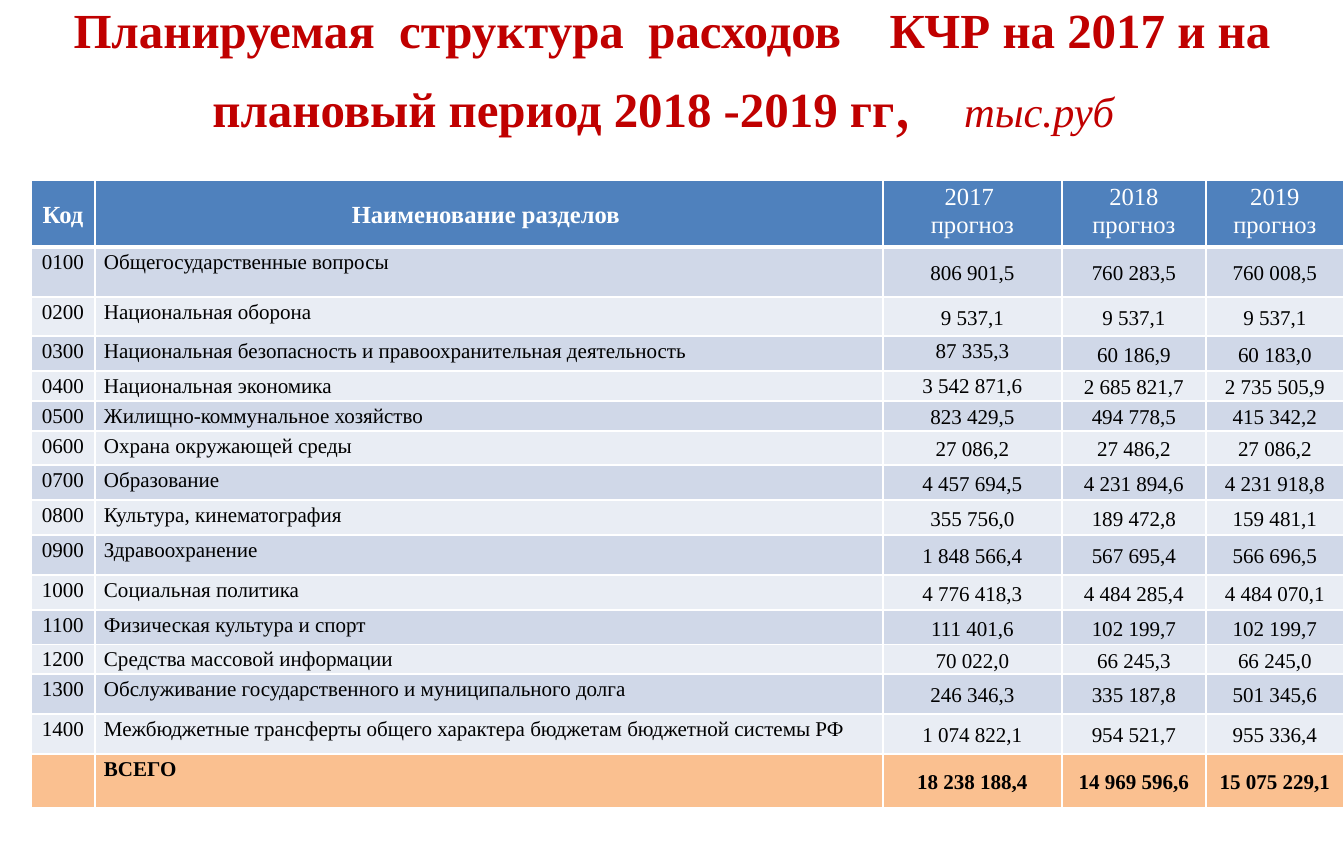
from dataclasses import dataclass
from lxml.etree import SubElement
from pptx import Presentation
from pptx.dml.color import RGBColor
from pptx.enum.text import MSO_ANCHOR as ANCHOR, PP_ALIGN as ALIGN
from pptx.oxml.ns import qn
from pptx.util import Pt

PX = 914400 / 126.4


@dataclass(frozen=True)
class Theme:
    font: str = "Times New Roman"
    red: str = "C00000"
    white: str = "FFFFFF"
    black: str = "000000"
    head: str = "4F81BD"
    bands: tuple = ("D0D8E8", "E9EDF4")
    total: str = "FAC090"
    title_size: float = 27.9
    gap_size: float = 39.6
    unit_size: float = 24.3
    head_size: int = 14
    body_size: int = 12


T = Theme()
COLS = (64, 788, 179, 144, 138)
ROWS = (66, 50, 39, 35, 30, 30, 34, 35, 35, 40, 35, 35, 29, 40, 40, 54)
HEAD = ("Код", "Наименование разделов ", "2017 \nпрогноз", "2018 прогноз", "2019 прогноз")
BODY = (
    ("0100", "Общегосударственные вопросы", "806 901,5", "760 283,5", "760 008,5"),
    ("0200", "Национальная оборона", "9 537,1", "9 537,1", "9 537,1"),
    ("0300", "Национальная безопасность и правоохранительная деятельность",
     "87 335,3", "60 186,9", "60 183,0"),
    ("0400", "Национальная экономика", "3 542 871,6", "2 685 821,7", "2 735 505,9"),
    ("0500", "Жилищно-коммунальное хозяйство", "823 429,5", "494 778,5", "415 342,2"),
    ("0600", "Охрана окружающей среды", "27 086,2", "27 486,2", "27 086,2"),
    ("0700", "Образование", "4 457 694,5", "4 231 894,6", "4 231 918,8"),
    ("0800", "Культура, кинематография", "355 756,0", "189 472,8", "159 481,1"),
    ("0900", "Здравоохранение", "1 848 566,4", "567 695,4", "566 696,5"),
    ("1000", "Социальная политика", "4 776 418,3", "4 484 285,4", "4 484 070,1"),
    ("1100", "Физическая культура и спорт", "111 401,6", "102 199,7", "102 199,7"),
    ("1200", "Средства массовой информации", "70 022,0", "66 245,3", "66 245,0"),
    ("1300", "Обслуживание государственного и муниципального долга",
     "246 346,3", "335 187,8", "501 345,6"),
    ("1400", "Межбюджетные трансферты общего характера бюджетам бюджетной системы РФ",
     "1 074 822,1", "954 521,7", "955 336,4"),
)
TOTAL = ("", "ВСЕГО", "18 238 188,4", "14 969 596,6", "15 075 229,1")
TOP_CODES = ("0300", "0400")


def px(n):
    return round(n * PX)


def rgb(color):
    return RGBColor.from_string(color)


def add_text(p, text, size=T.body_size, color=T.black, bold=False, italic=False):
    r = p.add_run()
    r.text = text
    f = r.font
    f.name, f.size, f.bold, f.italic = T.font, Pt(size), bold, italic
    f.color.rgb = rgb(color)


def add_title(s, x, y, w, h):
    tf = s.shapes.add_textbox(px(x), px(y), px(w), px(h)).text_frame
    tf.word_wrap = True
    tf.vertical_anchor = ANCHOR.MIDDLE
    p = tf.paragraphs[0]
    p.alignment = ALIGN.CENTER
    add_text(p, "Планируемая  структура  расходов    КЧР на 2017 и на плановый период 2018 -2019 гг",
             size=T.title_size, color=T.red, bold=True)
    add_text(p, ",   ", size=T.gap_size, color=T.red)
    add_text(p, "тыс.руб", size=T.unit_size, color=T.red, italic=True)
    add_text(p, " ", size=T.gap_size, color=T.red)


def set_borders(cell, bottom):
    pr = cell._tc.get_or_add_tcPr()
    for i, (side, width) in enumerate((("L", 1), ("R", 1), ("T", 1), ("B", bottom))):
        ln = SubElement(pr, qn(f"a:ln{side}"), w=str(Pt(width)))
        fill = SubElement(ln, qn("a:solidFill"))
        SubElement(fill, qn("a:srgbClr"), val=T.white)
        pr.insert(i, ln)


def fill_cell(cell, text, fill, anchor, align, inset=(9, 0), spacing=1.15, border=1, **fmt):
    cell.fill.solid()
    cell.fill.fore_color.rgb = rgb(fill)
    set_borders(cell, border)
    cell.vertical_anchor = anchor
    cell.margin_left = cell.margin_right = px(inset[0])
    cell.margin_top = cell.margin_bottom = px(inset[1])
    tf = cell.text_frame
    for i, line in enumerate(text.split("\n") if text else ()):
        p = tf.add_paragraph() if i else tf.paragraphs[0]
        p.alignment, p.line_spacing = align, spacing
        add_text(p, line, **fmt)


def add_budget_table(s, x, y, w, h):
    tbl = s.shapes.add_table(len(ROWS), len(COLS), px(x), px(y), px(w), px(h)).table
    for col, width in zip(tbl.columns, COLS):
        col.width = px(width)
    for row, height in zip(tbl.rows, ROWS):
        row.height = px(height)

    for c, text in enumerate(HEAD):
        year = c > 1
        fill_cell(tbl.cell(0, c), text, T.head, ANCHOR.TOP if year else ANCHOR.MIDDLE,
                  ALIGN.CENTER, inset=(12, 4) if year else (9, 0),
                  spacing=1.0 if year else 1.15, border=3,
                  size=T.head_size, color=T.white, bold=not year)

    for r, record in enumerate((*BODY, TOTAL), 1):
        is_total = record is TOTAL
        fill = T.total if is_total else T.bands[(r - 1) % 2]
        for c, text in enumerate(record):
            top = c < 2 or (c == 2 and record[0] in TOP_CODES)
            fill_cell(tbl.cell(r, c), text, fill, ANCHOR.TOP if top else ANCHOR.MIDDLE,
                      ALIGN.LEFT if c == 1 else ALIGN.CENTER, bold=is_total)


def main():
    prs = Presentation()
    prs.slide_width, prs.slide_height = px(1344), px(846)
    s = prs.slides.add_slide(prs.slide_layouts[6])
    add_title(s, 0, 44, 1344, 53)
    add_budget_table(s, 31, 180, sum(COLS), sum(ROWS))
    prs.save("out.pptx")


if __name__ == "__main__":
    main()
